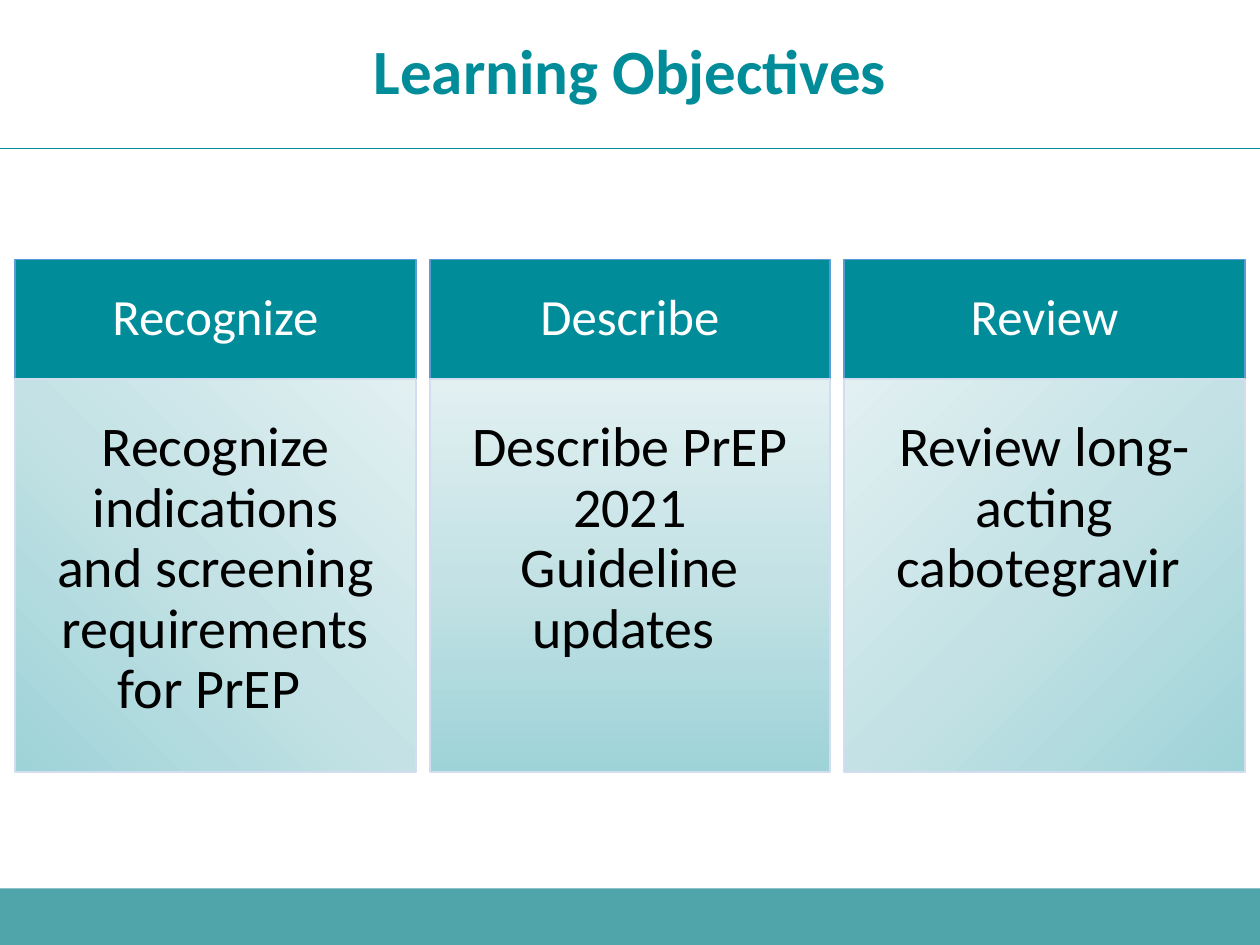
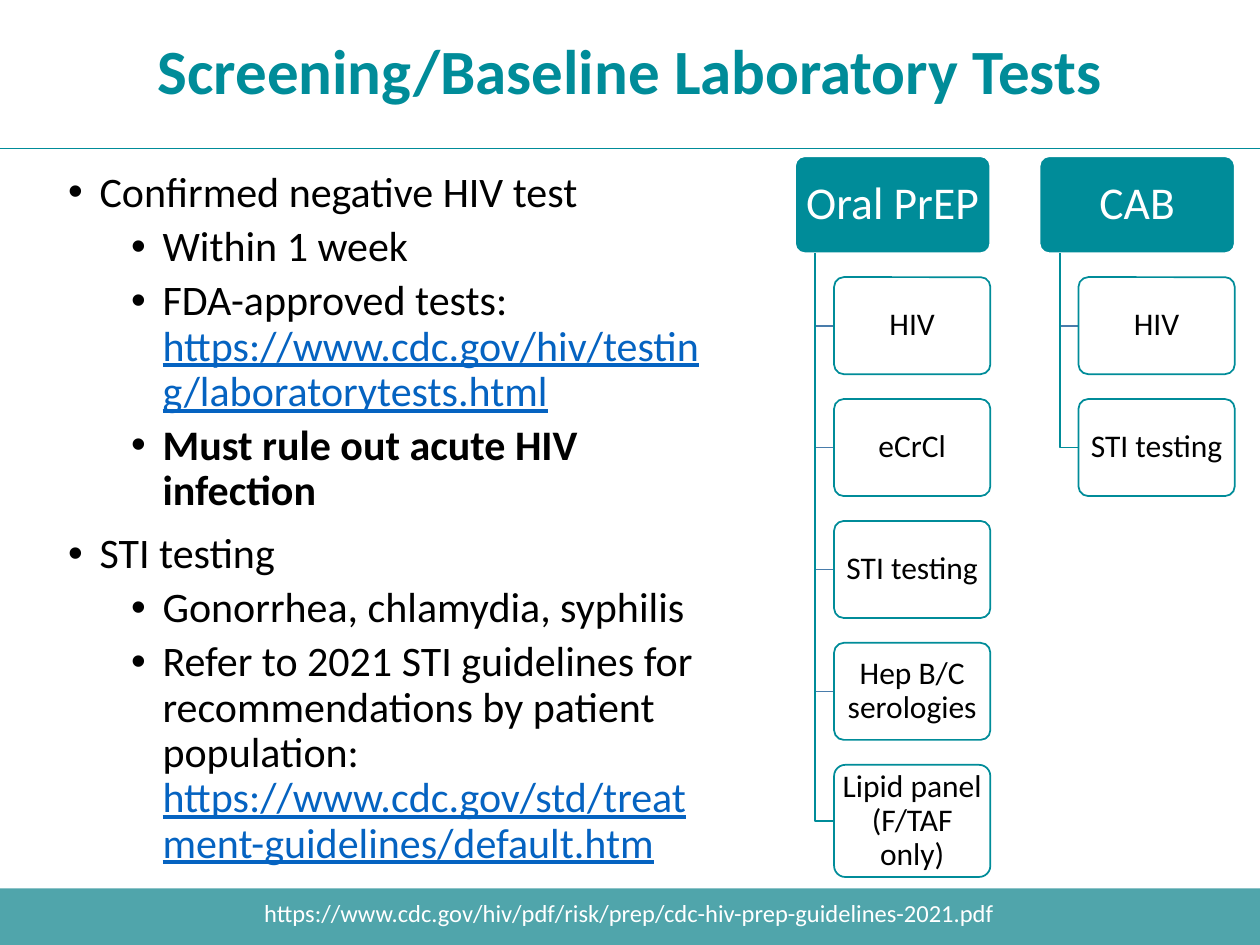
"""Build two slides on PrEP learning objectives and baseline laboratory tests."""
from lxml import etree
from pptx import Presentation
from pptx.dml.color import RGBColor
from pptx.enum.shapes import MSO_CONNECTOR as Connector, MSO_SHAPE as Shape
from pptx.enum.text import MSO_ANCHOR as Anchor, MSO_AUTO_SIZE as AutoSize, PP_ALIGN as Align
from pptx.oxml import parse_xml
from pptx.oxml.ns import nsdecls, qn
from pptx.util import Inches, Pt

TEAL = RGBColor(0x00, 0x8C, 0x99)
BAND_TEAL = RGBColor(0x50, 0xA5, 0xAB)
HEADER_EDGE = RGBColor(0x5B, 0x9B, 0xD5)
CARD_EDGE = RGBColor(0xD2, 0xDE, 0xEF)
BRANCH_BLUE = RGBColor(0x49, 0x7C, 0xAB)
LINK_BLUE = RGBColor(0x05, 0x63, 0xC1)
WHITE = RGBColor(0xFF, 0xFF, 0xFF)
BLACK = RGBColor(0x00, 0x00, 0x00)
CARD_STOPS = [
    (0, RGBColor(0x9E, 0xD3, 0xD8)),
    (50, RGBColor(0xC4, 0xE2, 0xE5)),
    (100, RGBColor(0xE2, 0xF0, 0xF2)),
]
FONT = "Calibri"


def write_text(frame, text, size, color, inset=(0.1, 0.05), anchor=Anchor.MIDDLE, bold=False):
    """Write one centred paragraph into a text frame."""
    across, down = Inches(inset[0]), Inches(inset[1])
    frame_format = {
        "word_wrap": True, "auto_size": AutoSize.NONE, "vertical_anchor": anchor,
        "margin_left": across, "margin_right": across,
        "margin_top": down, "margin_bottom": down,
    }
    for name, value in frame_format.items():
        setattr(frame, name, value)
    para = frame.paragraphs[0]
    para.alignment, para.line_spacing, para.space_before = Align.CENTER, 0.9, Pt(0)
    span = para.add_run()
    span.text = text
    for name, value in {"name": FONT, "size": Pt(size), "bold": bold}.items():
        setattr(span.font, name, value)
    span.font.color.rgb = color


def add_panel(page, kind, place, fill, edge=None):
    """Add a flat preset shape at a place given in inches."""
    panel = page.shapes.add_shape(kind, *map(Inches, place))
    panel.shadow.inherit = False
    panel.fill.solid()
    panel.fill.fore_color.rgb = fill
    if edge is None:
        panel.line.fill.background()
    else:
        panel.line.color.rgb = edge
        panel.line.width = Pt(1)
    if kind == Shape.ROUNDED_RECTANGLE:
        panel.adjustments[0] = 0.1
    return panel


deck = Presentation()
deck.slide_width, deck.slide_height = Inches(10), Inches(7.5)
objectives = deck.slides.add_slide(deck.slide_layouts[5])
tests = deck.slides.add_slide(deck.slide_layouts[1])

band = add_panel(objectives, Shape.RECTANGLE, (0, 7.05, 10, 0.45), BAND_TEAL)
rule = objectives.shapes.add_connector(
    Connector.STRAIGHT, 0, Inches(1.18), Inches(10), Inches(1.18))
rule.line.color.rgb = TEAL
rule.line.width = Pt(0.5)
etree.SubElement(rule.element.spPr, qn("a:effectLst"))
for shared in (band, rule):
    deck.slide_master.element.cSld.spTree.append(shared.element)

for page, heading in ((objectives, "Learning Objectives"),
                      (tests, "Screening/Baseline Laboratory Tests")):
    title = page.shapes.title
    title.left, title.top, title.width, title.height = 0, 0, Inches(10), Inches(1.17)
    write_text(title.text_frame, heading, 36, TEAL, bold=True)

cards = [
    ("Recognize", "Recognize indications and screening requirements for PrEP ", 315),
    ("Describe", "Describe PrEP 2021 Guideline updates ", 270),
    ("Review", "Review long-acting cabotegravir ", 225),
]
stops = "".join(
    f'<a:gs pos="{position * 1000}"><a:srgbClr val="{color}"/></a:gs>'
    for position, color in CARD_STOPS)
for column, (verb, goal, angle) in enumerate(cards):
    left = 0.12 + column * 3.29
    header = add_panel(objectives, Shape.RECTANGLE, (left, 2.06, 3.18, 0.95), TEAL, HEADER_EDGE)
    write_text(header.text_frame, verb, 29, WHITE, (0.25, 0.25))
    card = add_panel(objectives, Shape.RECTANGLE, (left, 3.01, 3.18, 3.12), WHITE, CARD_EDGE)
    solid = card.element.spPr.find(qn("a:solidFill"))
    card.element.spPr.replace(solid, parse_xml(
        f'<a:gradFill {nsdecls("a")} rotWithShape="1"><a:gsLst>{stops}</a:gsLst>'
        f'<a:lin ang="{angle * 60000}" scaled="0"/></a:gradFill>'))
    write_text(card.text_frame, goal, 32, BLACK, (0.31, 0.31), Anchor.TOP)

bullets = [
    (0, "Confirmed negative HIV test", "", False),
    (1, "Within 1 week", "", False),
    (1, "FDA-approved tests: ", "https://www.cdc.gov/hiv/testing/laboratorytests.html", False),
    (1, "Must rule out acute HIV infection", "", True),
    (0, "STI testing", "", False),
    (1, "Gonorrhea, chlamydia, syphilis", "", False),
    (1, "Refer to 2021 STI guidelines for recommendations by patient population: ",
     "https://www.cdc.gov/std/treatment-guidelines/default.htm", False),
]
body = tests.placeholders[1]
body.left, body.top, body.width, body.height = map(Inches, (0.44, 1.31, 5.26, 5.7))
body.text_frame.auto_size = AutoSize.NONE
for index, (level, words, address, bold) in enumerate(bullets):
    para = body.text_frame.paragraphs[0] if index == 0 else body.text_frame.add_paragraph()
    para.level = level
    properties = para._p.get_or_add_pPr()
    properties.set("marL", str(Inches(0.25 + 0.5 * level)))
    properties.set("indent", str(Inches(-0.25)))
    etree.SubElement(properties, qn("a:buFont")).set("typeface", "Arial")
    etree.SubElement(properties, qn("a:buChar")).set("char", "•")
    para.line_spacing = 0.9
    para.space_before = Pt(0 if index == 0 else 5 if level else 10)
    for text, color in ((words, BLACK), (address, LINK_BLUE)):
        if text:
            span = para.add_run()
            span.text = text
            font_format = {"name": FONT, "size": Pt(24), "bold": bold,
                           "underline": color == LINK_BLUE}
            for name, value in font_format.items():
                setattr(span.font, name, value)
            span.font.color.rgb = color

regimens = [
    (6.31, "Oral PrEP",
     ["HIV", "eCrCl", "STI testing", "Hep B/C serologies", "Lipid panel (F/TAF only)"]),
    (8.25, "CAB", ["HIV", "STI testing"]),
]
for left, regimen, labs in regimens:
    root = add_panel(tests, Shape.ROUNDED_RECTANGLE, (left, 1.24, 1.55, 0.77), TEAL, WHITE)
    write_text(root.text_frame, regimen, 26, WHITE, (0.03, 0.03))
    trunk, lab_left = left + 0.16, left + 0.31
    for row, lab in enumerate(labs):
        top = 2.2 + row * 3.87 / 4
        height = 0.89 if row == 4 else 0.77
        middle = top + height / 2
        builder = tests.shapes.build_freeform(Inches(trunk), Inches(2.01))
        builder.add_line_segments(
            [(Inches(trunk), Inches(middle)), (Inches(lab_left), Inches(middle))], close=False)
        branch = builder.convert_to_shape()
        branch.shadow.inherit = False
        branch.fill.background()
        branch.line.color.rgb = TEAL if lab == labs[-1] else BRANCH_BLUE
        branch.line.width = Pt(1)
        node = add_panel(tests, Shape.ROUNDED_RECTANGLE, (lab_left, top, 1.24, height), WHITE, TEAL)
        write_text(node.text_frame, lab, 18, BLACK, (0.02, 0.02))

source = tests.shapes.add_textbox(*map(Inches, (1.53, 7.09, 6.93, 0.34)))
write_text(source.text_frame,
           "https://www.cdc.gov/hiv/pdf/risk/prep/cdc-hiv-prep-guidelines-2021.pdf", 14, WHITE)

deck.save("out.pptx")
